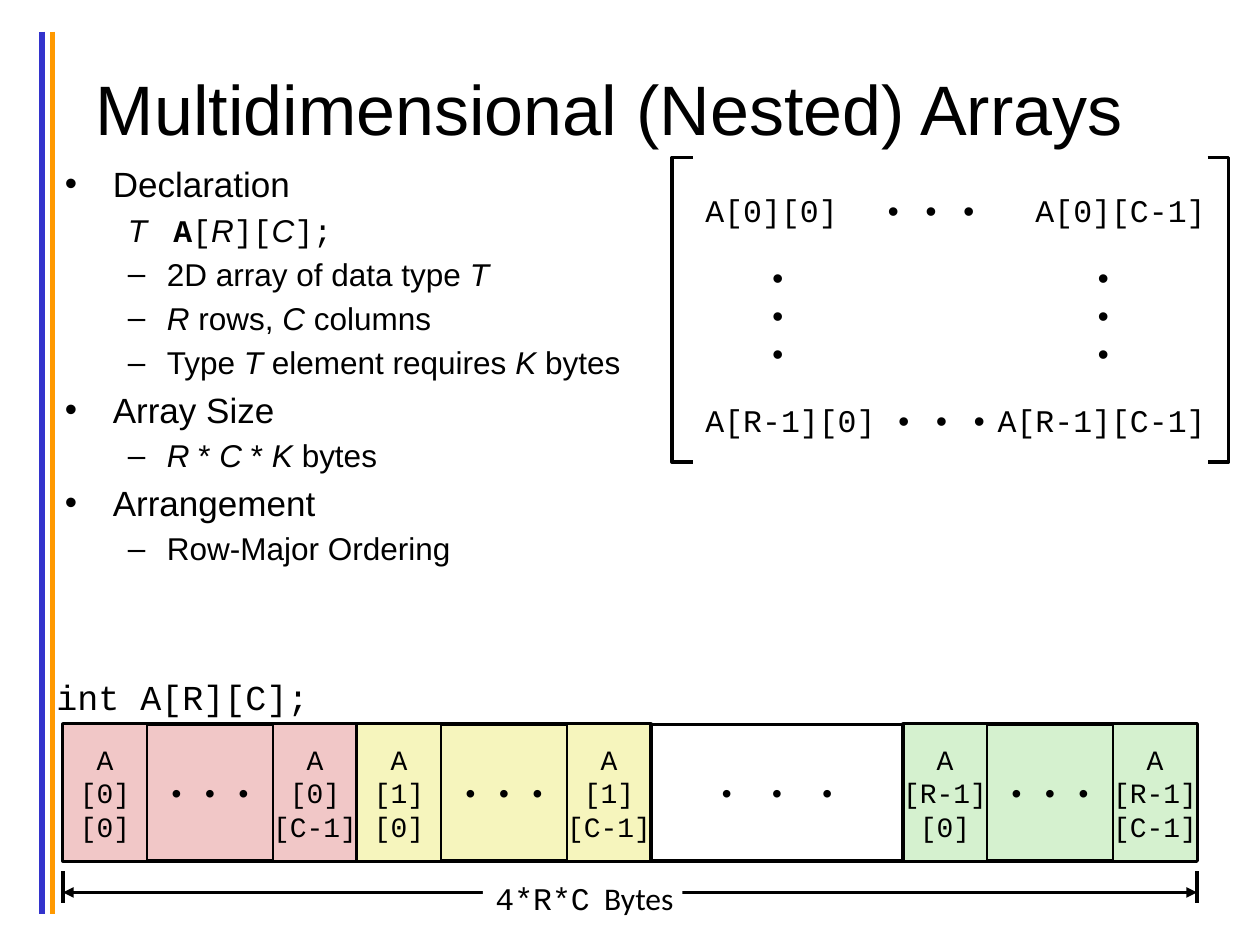
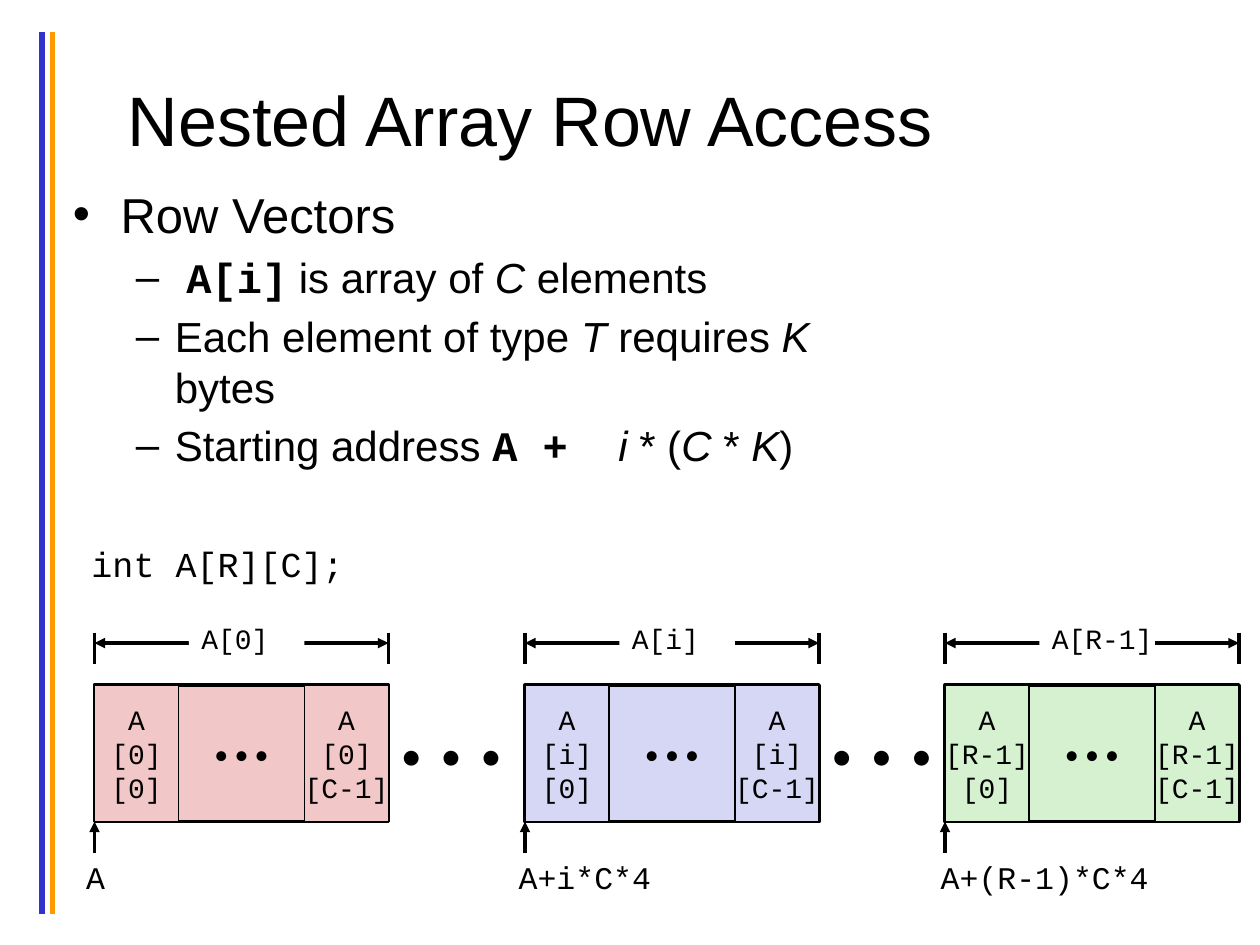
from lxml.etree import SubElement
from pptx import Presentation
from pptx.dml.color import RGBColor
from pptx.enum.shapes import MSO_CONNECTOR, MSO_SHAPE
from pptx.enum.text import MSO_ANCHOR, PP_ALIGN
from pptx.oxml.ns import qn
from pptx.util import Inches, Pt

BLACK = RGBColor(0x00, 0x00, 0x00)
WHITE = RGBColor(0xFF, 0xFF, 0xFF)
BLUE = RGBColor(0x33, 0x33, 0xCC)
ORANGE = RGBColor(0xFF, 0x99, 0x00)
PINK = RGBColor(0xF1, 0xC7, 0xC7)
YELLOW = RGBColor(0xF6, 0xF5, 0xBD)
GREEN = RGBColor(0xD5, 0xF1, 0xCF)
LILAC = RGBColor(0xD6, 0xD6, 0xF5)

SANS, MONO, CALIBRI = "Arial", "Courier New", "Calibri"
LEFT, CENTER, RIGHT = PP_ALIGN.LEFT, PP_ALIGN.CENTER, PP_ALIGN.RIGHT
ITALIC = dict(italic=True)
CODE = dict(font=MONO)
BOLD_CODE = dict(font=MONO, bold=True)

CELL_W, ROW_W, ROW_H = 8, 28, 13
DOTS = "• • •"
WIDE_DOTS = "•  •  •"
INDENTS = [(0.38, -0.38), (0.81, -0.31)]


def grid(n):
    return Inches(n / 12)


def add_runs(p, runs, size, font=SANS, bold=False, italic=False):
    for run in [runs] if isinstance(runs, str) else runs:
        text, own = (run, {}) if isinstance(run, str) else run
        r = p.add_run()
        r.text = text
        r.font.size = Pt(size)
        r.font.name = own.get("font", font)
        r.font.bold = own.get("bold", bold)
        r.font.italic = own.get("italic", italic)
        r.font.color.rgb = BLACK


def put_text(sp, paragraphs, align=LEFT, anchor=MSO_ANCHOR.MIDDLE, wrap=False, **fmt):
    tf = sp.text_frame
    tf.word_wrap = wrap
    tf.vertical_anchor = anchor
    for i, runs in enumerate(paragraphs):
        p = tf.paragraphs[0] if i == 0 else tf.add_paragraph()
        p.alignment = align
        add_runs(p, runs, **fmt)


def text_box(s, box, paragraphs, **fmt):
    sp = s.shapes.add_textbox(*map(grid, box))
    put_text(sp, paragraphs, **fmt)


def add_rect(s, box, paragraphs, fill=WHITE, border=None, **fmt):
    sp = s.shapes.add_shape(MSO_SHAPE.RECTANGLE, *map(grid, box))
    sp.shadow.inherit = False
    sp.fill.solid()
    sp.fill.fore_color.rgb = fill
    if border:
        sp.line.color.rgb = BLACK
        sp.line.width = Pt(border)
    else:
        sp.line.fill.background()
    put_text(sp, paragraphs, **fmt)


def add_line(s, x1, y1, x2, y2, color=BLACK, width=2, heads=()):
    ln = s.shapes.add_connector(MSO_CONNECTOR.STRAIGHT, *map(grid, (x1, y1, x2, y2)))
    ln.line.color.rgb = color
    ln.line.width = Pt(width)
    for head in heads:
        SubElement(ln.line._get_or_add_ln(), qn(f"a:{head}"), type="triangle")
    SubElement(ln._element.spPr, qn("a:effectLst"))


def add_frame(prs, title, box):
    s = prs.slides.add_slide(prs.slide_layouts[6])
    for x, color in ((4, BLUE), (5, ORANGE)):
        add_line(s, x, 3, x, 87, color=color, width=3)
    text_box(s, box, [title], align=CENTER, wrap=True, size=40)
    return s


def add_outline(s, box, items, sizes):
    sp = s.shapes.add_textbox(*map(grid, box))
    tf = sp.text_frame
    tf.word_wrap = True
    for i, (level, bullet, runs) in enumerate(items):
        p = tf.paragraphs[0] if i == 0 else tf.add_paragraph()
        p.level = level
        pPr = p._p.get_or_add_pPr()
        margin, indent = INDENTS[level]
        pPr.set("marL", str(Inches(margin)))
        pPr.set("indent", str(Inches(indent)))
        SubElement(SubElement(pPr, qn("a:spcBef")), qn("a:spcPct"), val="20000")
        if bullet:
            SubElement(pPr, qn("a:buFont"), typeface=SANS)
            SubElement(pPr, qn("a:buChar"), char=bullet)
        else:
            SubElement(pPr, qn("a:buNone"))
        add_runs(p, runs, size=sizes[level])


def add_array_row(s, x, y, index, fill, dots_font=MONO):
    add_rect(s, (x, y, ROW_W, ROW_H), [DOTS], fill=fill, border=2.25,
             align=CENTER, size=16, font=dots_font)
    for dx, column in ((0, "0"), (ROW_W - CELL_W, "C-1")):
        add_rect(s, (x + dx, y, CELL_W, ROW_H), ["A", f"[{index}]", f"[{column}]"],
                 fill=fill, border=1, align=CENTER, size=16, font=MONO)


def add_span(s, x, y, width, drop):
    for end in (x, x + width):
        add_line(s, end, y, end, y + 3)
    add_line(s, x, y + drop, x + width, y + drop, heads=("headEnd", "tailEnd"))


def add_bracket(s, tip, spine, top, bottom):
    points = [(tip, top), (spine, top), (spine, bottom), (tip, bottom)]
    start, *rest = [(grid(x), grid(y)) for x, y in points]
    fb = s.shapes.build_freeform(*start)
    fb.add_line_segments(rest, close=False)
    sp = fb.convert_to_shape()
    sp.shadow.inherit = False
    sp.fill.background()
    sp.line.color.rgb = BLACK
    sp.line.width = Pt(2)


def add_matrix(s, x, y):
    fmt = dict(size=18, font=MONO)
    for dy, row, dots_dx in ((2, "0", 19), (22, "R-1", 20)):
        add_rect(s, (x + 2, y + dy, 16, 6), [f"A[{row}][0]"], **fmt)
        add_rect(s, (x + dots_dx, y + dy, 12, 6), [DOTS], **fmt)
        add_rect(s, (x + 36, y + dy, 16, 6), [f"A[{row}][C-1]"], align=RIGHT, **fmt)
    for dx in (8, 39):
        add_rect(s, (x + dx, y + 10, 6, 10), ["•"] * 3, **fmt)
    for tip, spine in ((2, 0), (51, 53)):
        add_bracket(s, x + tip, x + spine, y, y + 29)


def add_declaration(s, x, y):
    text_box(s, (x, y, 26.6, 5.25), ["int A[R][C];"], align=RIGHT,
             anchor=MSO_ANCHOR.TOP, size=20, font=MONO)


def add_memory_layout(s, x, y):
    for dx, index, fill in ((0, "0", PINK), (ROW_W, "1", YELLOW), (80, "R-1", GREEN)):
        add_array_row(s, x + dx, y, index, fill)
    add_rect(s, (x + 2 * ROW_W, y, 24, ROW_H), [WIDE_DOTS], border=2,
             align=CENTER, size=16, font=MONO)
    add_span(s, x, y + 14, 108, 2)
    add_rect(s, (x + 40, y + 14, 19, 5), [["4*R*C", ("  Bytes", dict(font=CALIBRI))]],
             size=18, font=MONO)


def add_row_access(s, x, y, index, fill, address, caption_box):
    add_array_row(s, x, y, index, fill, dots_font=CALIBRI)
    add_span(s, x, y - 5, ROW_W, 1)
    add_rect(s, (x + 9, y - 7, 11, 5), [f"A[{index}]"], size=16, font=MONO)
    add_line(s, x, y + 16, x, y + ROW_H, heads=("tailEnd",))
    dx, width = caption_box
    text_box(s, (x + dx, y + 15.9, width, 4.8), [address], align=CENTER,
             anchor=MSO_ANCHOR.TOP, wrap=True, size=18, font=MONO)


def nested_arrays_slide(prs):
    s = add_frame(prs, "Multidimensional (Nested) Arrays", (5, 6.5, 106, 7.5))
    add_outline(s, (5, 14.9, 58.2, 44.2), [
        (0, "•", "Declaration"),
        (1, None, [("T   ", ITALIC), ("A", BOLD_CODE), ("[", CODE), ("R", ITALIC),
                   ("][", CODE), ("C", ITALIC), ("];", CODE)]),
        (1, "–", ["2D array of data type ", ("T", ITALIC)]),
        (1, "–", [("R", ITALIC), " rows, ", ("C", ITALIC), " columns"]),
        (1, "–", ["Type ", ("T", ITALIC), " element requires ", ("K", ITALIC), " bytes"]),
        (0, "•", "Array Size"),
        (1, "–", [("R", ITALIC), " * ", ("C ", ITALIC), "* ", ("K ", ITALIC), "bytes"]),
        (0, "•", "Arrangement"),
        (1, "–", "Row-Major Ordering"),
    ], sizes=(20, 18))
    add_matrix(s, 64, 15)
    add_declaration(s, 4, 63.75)
    add_memory_layout(s, 6, 69)


def row_access_slide(prs):
    s = add_frame(prs, "Nested Array Row Access", (5, 7.5, 91, 7.5))
    add_outline(s, (5.75, 17, 78.25, 19), [
        (0, "•", "Row Vectors"),
        (1, "–", [" ", ("A[i]", BOLD_CODE), " is array of ", ("C", ITALIC), " elements"]),
        (1, "–", ["Each element of type ", ("T ", ITALIC), "requires ",
                  ("K ", ITALIC), "bytes"]),
        (1, "–", ["Starting address ", ("A +  ", BOLD_CODE), ("i", ITALIC), " * (",
                  ("C ", ITALIC), "* ", ("K", ITALIC), ")"]),
    ], sizes=(28, 24))
    add_declaration(s, 7.35, 51.1)
    y = 65.25
    for x in (37, 78):
        add_rect(s, (x, y, 13, ROW_H), [WIDE_DOTS], size=24, font=CALIBRI)
    for x, index, fill, address, caption_box in (
        (9, "0", PINK, "A", (-2.5, 5.2)),
        (50, "i", LILAC, "A+i*C*4", (-3.8, 19)),
        (90, "R-1", GREEN, "A+(R-1)*C*4", (-2, 23)),
    ):
        add_row_access(s, x, y, index, fill, address, caption_box)


def main():
    prs = Presentation()
    prs.slide_width, prs.slide_height = grid(120), grid(90)
    nested_arrays_slide(prs)
    row_access_slide(prs)
    prs.save("out.pptx")


if __name__ == "__main__":
    main()
